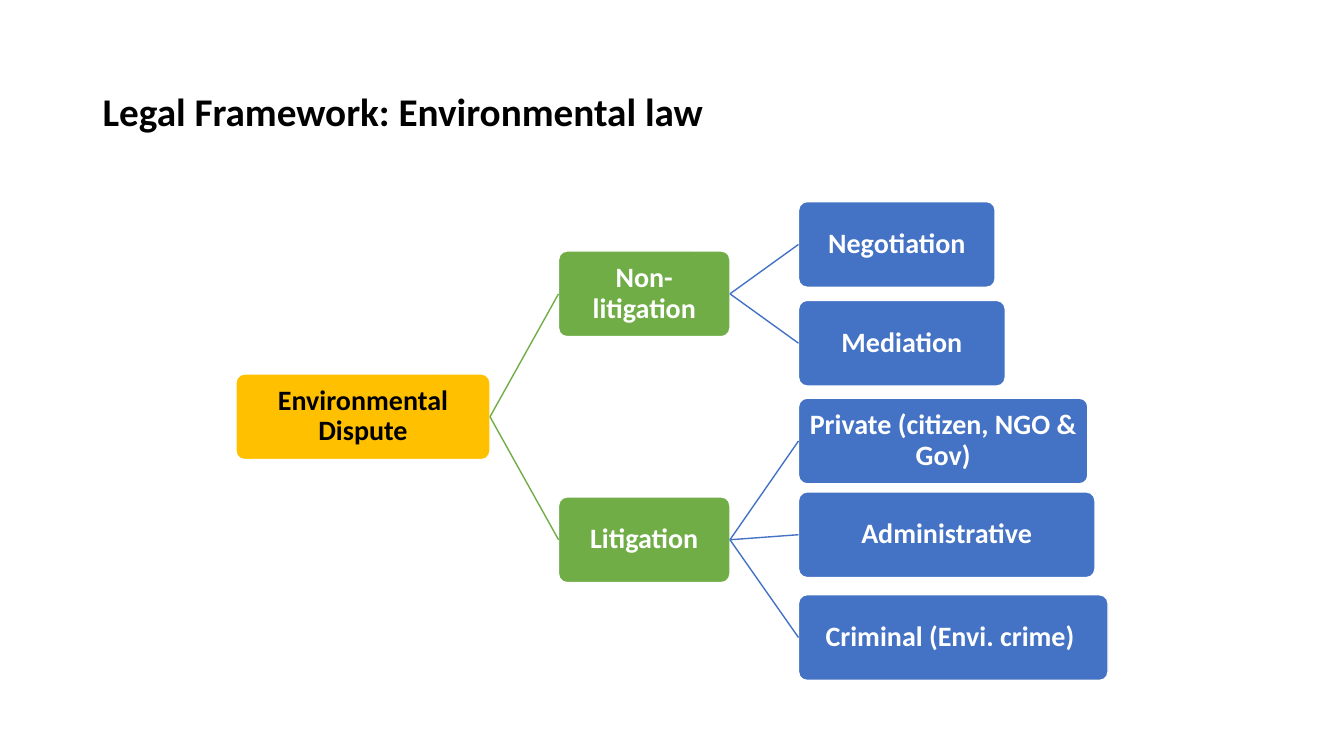
from lxml.etree import SubElement
from pptx import Presentation
from pptx.dml.color import RGBColor
from pptx.enum.shapes import MSO_CONNECTOR as Conn, MSO_SHAPE as Shape
from pptx.enum.text import MSO_ANCHOR as Anchor, PP_ALIGN as Align
from pptx.oxml.ns import qn
from pptx.util import Inches, Pt

GOLD, GREEN, BLUE = "FFC000", "70AD47", "4472C4"
BLACK, WHITE = "000000", "FFFFFF"


def color(code):
    return RGBColor.from_string(code)


def write(frame, text, size=20, ink=WHITE, align=Align.CENTER, pad=(0.04, 0.04)):
    frame.word_wrap = True
    frame.vertical_anchor = Anchor.MIDDLE
    frame.margin_left = frame.margin_right = Inches(pad[0])
    frame.margin_top = frame.margin_bottom = Inches(pad[1])
    para = frame.paragraphs[0]
    para.alignment = align
    para.line_spacing = 0.9
    run = para.add_run()
    run.text = text
    font = run.font
    font.name, font.size, font.bold = "Calibri", Pt(size), True
    font.color.rgb = color(ink)


class Deck:
    """Holds the tree style and the current slide."""

    high = 0.85
    edge = Pt(1)

    def __init__(self):
        self.prs = Presentation()
        self.prs.slide_width = Inches(13.33)
        self.prs.slide_height = Inches(7.5)
        self.slide = self.prs.slides.add_slide(self.prs.slide_layouts[6])

    def title(self, text):
        box = self.slide.shapes.add_textbox(
            Inches(0.92), Inches(0.4), Inches(11.5), Inches(1.45))
        write(box.text_frame, text, size=28, ink=BLACK, align=Align.LEFT,
              pad=(0.1, 0.05))

    def node(self, text, left, top, wide, fill, ink=WHITE):
        box = self.slide.shapes.add_shape(
            Shape.ROUNDED_RECTANGLE, Inches(left), Inches(top),
            Inches(wide), Inches(self.high))
        box.adjustments[0] = 0.1
        box.shadow.inherit = False
        box.fill.solid()
        box.fill.fore_color.rgb = color(fill)
        box.line.color.rgb = color(WHITE)
        box.line.width = self.edge
        write(box.text_frame, text, ink=ink)
        return box

    def link(self, start, end, ink):
        line = self.slide.shapes.add_connector(Conn.STRAIGHT, 0, 0, 0, 0)
        line.begin_connect(start, 3)
        line.end_connect(end, 1)
        line.line.color.rgb = color(ink)
        line.line.width = self.edge
        SubElement(line._element.spPr, qn("a:effectLst"))

    def save(self):
        self.prs.save("out.pptx")


TREE = [
    ("Non-litigation", 2.49, [
        ("Negotiation", 2.0, 1.95),
        ("Mediation", 2.98, 2.05)]),
    ("Litigation", 4.93, [
        ("Private (citizen, NGO & Gov)", 3.95, 2.87),
        ("Administrative", 4.88, 2.94),
        ("Criminal (Envi. crime) ", 5.9, 3.07)]),
]


def main():
    deck = Deck()
    deck.title("Legal Framework: Environmental law")
    root = deck.node("Environmental Dispute", 2.34, 3.71, 2.52, GOLD, ink=BLACK)
    for name, top, leaves in TREE:
        branch = deck.node(name, 5.54, top, 1.7, GREEN)
        deck.link(root, branch, GREEN)
        for text, y, wide in leaves:
            leaf = deck.node(text, 7.92, y, wide, BLUE)
            deck.link(branch, leaf, BLUE)
    deck.save()


if __name__ == "__main__":
    main()
